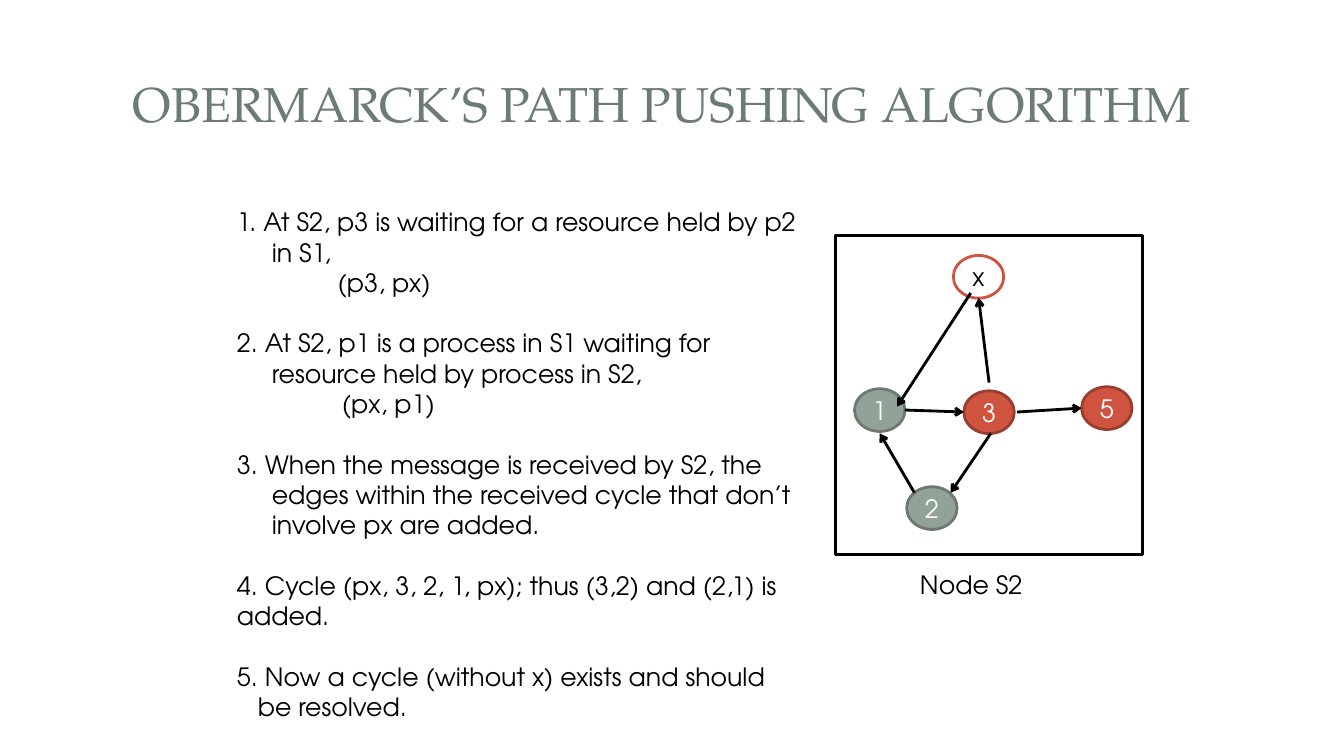
"""Build a slide on Obermarck's path pushing algorithm with its wait-for graph."""
import pptx
import pptx.util
import pptx.dml.color
import pptx.enum.shapes
import pptx.enum.text
import pptx.oxml.ns
import lxml.etree

Pt = pptx.util.Pt
SHAPES = pptx.enum.shapes.MSO_SHAPE
ALIGN = pptx.enum.text.PP_ALIGN
ANCHOR = pptx.enum.text.MSO_ANCHOR
BODY_FONT, TITLE_FONT = "TeX Gyre Adventor", "TeX Gyre Pagella"
BLACK, WHITE = "000000", "FFFFFF"
TITLE = "OBERMARCK’S PATH PUSHING ALGORITHM"

# (left indent, text) for each line of each step
STEPS = [
    [(0, "1. At S2, p3 is waiting for a resource held by p2"),
     (25, "in S1,"), (72, "(p3, px)")],
    [(0, "2. At S2, p1 is a process in S1 waiting for"),
     (25, "resource held by process in S2,"), (75, "(px, p1)")],
    [(0, "3. When the message is received by S2, the"),
     (25, "edges within the received cycle that don’t"),
     (25, "involve px are added.")],
    [(0, "4. Cycle (px, 3, 2, 1, px); thus (3,2) and (2,1) is added.")],
    [(0, "5. Now a cycle (without x) exists and should"),
     (15, "be resolved.")],
]
STEP_GAP = 21.7

RED, GREEN, HOLLOW = (
    ("CF543F", "993E2F", WHITE), ("93A299", "6D7871", WHITE), (WHITE, "CF543F", BLACK))
NODE_WIDTH, NODE_HEIGHT = 36, 30.5
NODES = [
    ("5", 772.6, 276.3, RED),
    ("3", 688.5, 279.2, RED),
    ("1", 610.4, 277.7, GREEN),
    ("x", 681, 182.5, HOLLOW),
    ("2", 647.7, 347.7, GREEN),
]
EDGES = [
    ((646.4, 292.9), (688.5, 294.3)),
    ((726.5, 294.3), (772.6, 291.5)),
    ((706.5, 273.3), (699, 212.7)),
    ((707.8, 309.5), (679, 352)),
    ((693.4, 209.3), (640.8, 290.4)),
    ((653.2, 352), (628.4, 309.5)),
]


def color(code):
    return pptx.dml.color.RGBColor.from_string(code)


def place(item, left, top, width, height):
    item.left, item.top, item.width, item.height = map(Pt, (left, top, width, height))


def style(para, size, code, font=BODY_FONT):
    para.font.name, para.font.size = font, Pt(size)
    para.font.color.rgb = color(code)


def add_figure(page, kind, frame, fill, line):
    figure = page.shapes.add_shape(kind, *map(Pt, frame))
    figure.shadow.inherit = False
    figure.fill.solid()
    figure.fill.fore_color.rgb = color(fill)
    figure.line.color.rgb = color(line)
    figure.line.width = Pt(2)
    return figure


def add_title(page):
    title = page.shapes.title
    place(title, 39, 32.4, 868, 82)
    title.text_frame.text = TITLE
    title.text_frame.vertical_anchor = ANCHOR.MIDDLE
    para = title.text_frame.paragraphs[0]
    para.alignment = ALIGN.CENTER
    style(para, 35, "6B7D72", TITLE_FONT)


def add_steps(page):
    body = page.placeholders[1]
    place(body, 162, 144, 420, 396)
    frame = body.text_frame
    frame.auto_size = pptx.enum.text.MSO_AUTO_SIZE.NONE
    lines = [(indent, text, STEP_GAP if step and not row else 0)
             for step, rows in enumerate(STEPS)
             for row, (indent, text) in enumerate(rows)]
    for index, (indent, text, gap) in enumerate(lines):
        para = frame.add_paragraph() if index else frame.paragraphs[0]
        para.text = text
        para.space_before = Pt(gap)
        style(para, 18, BLACK)
        properties = para._p.get_or_add_pPr()
        properties.set("marL", str(Pt(indent)))
        properties.set("indent", "0")
        properties.insert_element_before(
            properties.makeelement(pptx.oxml.ns.qn("a:buNone")),
            "a:tabLst", "a:defRPr", "a:extLst")


def add_node(page, label, left, top, colors):
    fill, line, text_color = colors
    node = add_figure(page, SHAPES.OVAL, (left, top, NODE_WIDTH, NODE_HEIGHT), fill, line)
    frame = node.text_frame
    frame.margin_left = frame.margin_right = frame.margin_top = frame.margin_bottom = 0
    frame.word_wrap = False
    frame.vertical_anchor = ANCHOR.MIDDLE
    frame.text = label
    frame.paragraphs[0].alignment = ALIGN.CENTER
    style(frame.paragraphs[0], 18, text_color)


def add_edge(page, start, end):
    edge = page.shapes.add_connector(
        pptx.enum.shapes.MSO_CONNECTOR.STRAIGHT, *map(Pt, start + end))
    edge.line.color.rgb = color(BLACK)
    edge.line.width = Pt(2)
    qn = pptx.oxml.ns.qn
    lxml.etree.SubElement(edge.line._get_or_add_ln(), qn("a:tailEnd"), type="arrow")
    lxml.etree.SubElement(edge._element.spPr, qn("a:effectLst"))


def add_graph(page):
    add_figure(page, SHAPES.RECTANGLE, (597, 168, 219, 228), WHITE, BLACK)
    for node in NODES:
        add_node(page, *node)
    for start, end in EDGES:
        add_edge(page, start, end)
    caption = page.shapes.add_textbox(*map(Pt, (650, 403.2, 88.6, 29)))
    caption.text_frame.word_wrap = False
    caption.text_frame.text = "Node S2"
    style(caption.text_frame.paragraphs[0], 18, BLACK)


def main():
    deck = pptx.Presentation()
    deck.slide_width, deck.slide_height = Pt(960), Pt(540)
    page = deck.slides.add_slide(deck.slide_layouts[1])
    add_title(page)
    add_steps(page)
    add_graph(page)
    deck.save("out.pptx")


if __name__ == "__main__":
    main()
